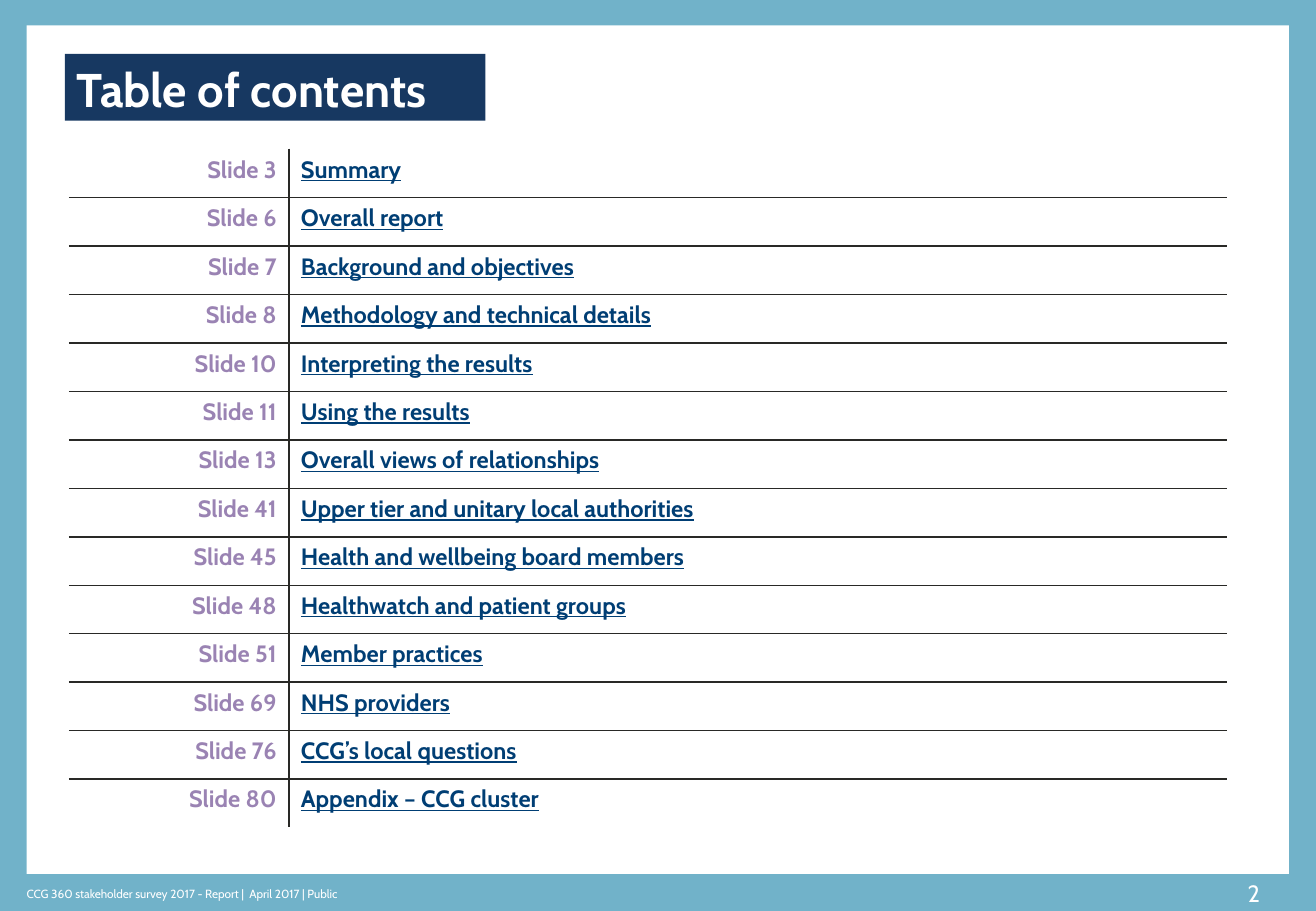
from lxml import etree
from pptx import Presentation
from pptx import util as u
from pptx.dml.color import RGBColor
from pptx.enum import shapes, text
from pptx.oxml import ns

SKY = RGBColor(0x71, 0xB2, 0xC9)
WHITE = RGBColor(0xFF, 0xFF, 0xFF)
NAVY = RGBColor(0x17, 0x38, 0x61)
LILAC = RGBColor(0x9A, 0x83, 0xB3)
LINK_BLUE = RGBColor(0x00, 0x3E, 0x74)
RULE = RGBColor(0x29, 0x29, 0x26)

CONTENTS = [
    ("Slide 3", "Summary"),
    ("Slide 6", "Overall report"),
    ("Slide 7", "Background and objectives"),
    ("Slide 8", "Methodology and technical details"),
    ("Slide 10", "Interpreting the results"),
    ("Slide 11", "Using the results"),
    ("Slide 13", "Overall views of relationships"),
    ("Slide 41", "Upper tier and unitary local authorities"),
    ("Slide 45", "Health and wellbeing board members"),
    ("Slide 48", "Healthwatch and patient groups"),
    ("Slide 51", "Member practices"),
    ("Slide 69", "NHS providers"),
    ("Slide 76", "CCG’s local questions"),
    ("Slide 80", "Appendix – CCG cluster"),
]


class Page:
    """Holds the style and the current slide; lengths are in points."""
    font = "Cabin"
    rule_width = 1

    def __init__(self, slide):
        self.slide = slide

    def add_words(self, frame, words, size, color, bold=False, underline=None,
                  align=text.PP_ALIGN.LEFT):
        line = frame.paragraphs[0]
        line.alignment = align
        run = line.add_run()
        run.text = words
        run.font.name = self.font
        run.font.size = u.Pt(size)
        run.font.bold = bold
        run.font.underline = underline
        run.font.color.rgb = color

    def panel(self, left, top, width, height, color):
        panel = self.slide.shapes.add_shape(
            shapes.MSO_SHAPE.RECTANGLE, *map(u.Pt, (left, top, width, height)))
        panel.shadow.inherit = False
        panel.fill.solid()
        panel.fill.fore_color.rgb = color
        panel.line.fill.background()
        return panel

    def label(self, left, top, width, height, words, size, color,
              insets=(0, 0, 0, 0), anchor=text.MSO_ANCHOR.MIDDLE, **style):
        frame = self.slide.shapes.add_textbox(
            *map(u.Pt, (left, top, width, height))).text_frame
        frame.word_wrap = True
        frame.vertical_anchor = anchor
        (frame.margin_left, frame.margin_top,
         frame.margin_right, frame.margin_bottom) = map(u.Pt, insets)
        self.add_words(frame, words, size, color, **style)

    def borders(self, cell, sides):
        properties = cell._tc.get_or_add_tcPr()
        for side in sides:
            edge = etree.SubElement(properties, ns.qn(f"a:ln{side}"),
                                    w=str(u.Pt(self.rule_width)))
            fill = etree.SubElement(edge, ns.qn("a:solidFill"))
            etree.SubElement(fill, ns.qn("a:srgbClr"), val=str(RULE))

    def table(self, left, top, widths, row_height, rows, styles):
        grid = self.slide.shapes.add_table(
            len(rows), len(widths), u.Pt(left), u.Pt(top),
            u.Pt(sum(widths)), u.Pt(row_height * len(rows))).table
        grid.first_row = grid.horz_banding = False
        for column, width in zip(grid.columns, widths):
            column.width = u.Pt(width)
        last_row, last_column = len(rows) - 1, len(widths) - 1
        for r, entries in enumerate(rows):
            grid.rows[r].height = u.Pt(row_height)
            for c, words in enumerate(entries):
                cell = grid.cell(r, c)
                # Only inner edges are ruled
                inner = {"L": c > 0, "R": c < last_column,
                         "T": r > 0, "B": r < last_row}
                self.borders(cell, [side for side in inner if inner[side]])
                cell.fill.background()
                self.add_words(cell.text_frame, words, **styles[c])


def main():
    deck = Presentation()
    deck.slide_width, deck.slide_height = u.Pt(780), u.Pt(540)
    slide = deck.slides.add_slide(deck.slide_layouts[6])
    page = Page(slide)

    # Coloured frame around a white sheet
    slide.background.fill.solid()
    slide.background.fill.fore_color.rgb = SKY
    page.panel(15.8, 15, 748.2, 503, WHITE)

    # Footer
    page.label(732.2, 517.7, 31.7, 24.5, "2", 14, WHITE,
               insets=(0, 3.6, 17, 3.6), anchor=text.MSO_ANCHOR.TOP,
               align=text.PP_ALIGN.RIGHT)
    page.label(15.8, 522.7, 385, 14.4,
               "CCG 360 stakeholder survey 2017 - Report |  April 2017 | Public",
               7, WHITE)

    # Title
    title = page.panel(38.4, 31.9, 249.4, 39.6, NAVY).text_frame
    title.vertical_anchor = text.MSO_ANCHOR.TOP
    page.add_words(title, "Table of contents", 28, WHITE, bold=True)

    # Contents
    entry = {"size": 14, "bold": True}
    page.table(41.3, 88.5, (129.9, 555.9), 28.74, CONTENTS, (
        {**entry, "color": LILAC, "align": text.PP_ALIGN.RIGHT},
        {**entry, "color": LINK_BLUE, "underline": True}))

    deck.save("out.pptx")


if __name__ == "__main__":
    main()
